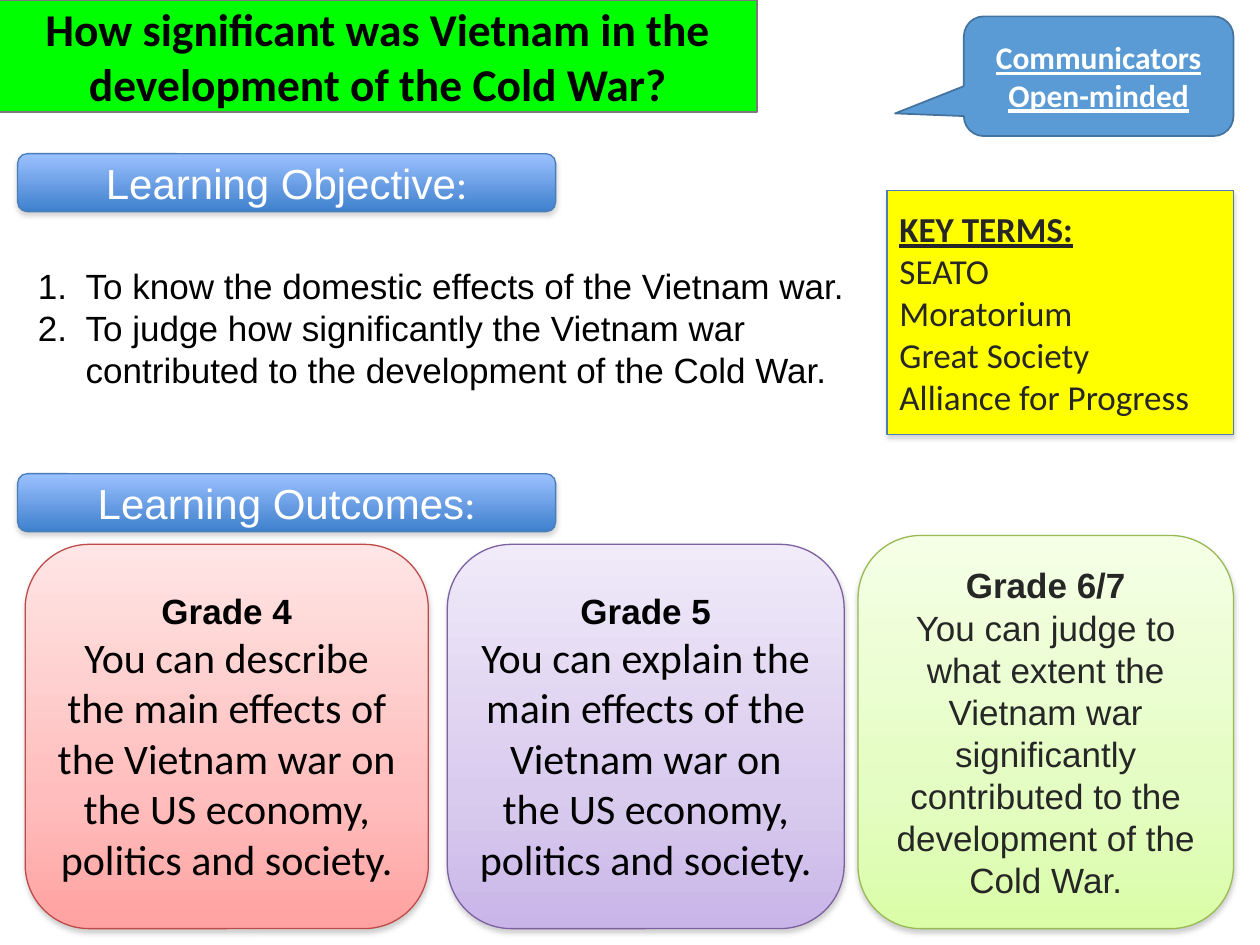
from copy import deepcopy

from lxml import etree
from pptx import Presentation
from pptx import util as u
from pptx.dml.color import RGBColor
from pptx.enum import shapes, text
from pptx.oxml.ns import qn

BLACK = RGBColor(0x00, 0x00, 0x00)
WHITE = RGBColor(0xFF, 0xFF, 0xFF)
CHARCOAL = RGBColor(0x26, 0x26, 0x26)
GREY = RGBColor(0x7A, 0x7A, 0x7A)
SHADOW = RGBColor(0x80, 0x80, 0x80)
GREEN = RGBColor(0x00, 0xFF, 0x00)
YELLOW = RGBColor(0xFF, 0xFF, 0x00)
BLUE = RGBColor(0x5B, 0x9B, 0xD5)
BLUE_EDGE = RGBColor(0x43, 0x73, 0x9E)
PANEL_EDGE = RGBColor(0x4A, 0x7E, 0xBB)
RED_EDGE = RGBColor(0xBE, 0x4B, 0x48)
PURPLE_EDGE = RGBColor(0x7D, 0x60, 0xA0)
LIME_EDGE = RGBColor(0x98, 0xB9, 0x54)

# Gradient stops from top to bottom: (position, colour)
HEADING_FADE = [(0, RGBColor(0x9B, 0xC1, 0xFF)), (1, RGBColor(0x3F, 0x80, 0xCD))]
RED_FADE = [(0, RGBColor(0xFF, 0xE5, 0xE5)), (0.65, RGBColor(0xFF, 0xBE, 0xBD)),
            (1, RGBColor(0xFF, 0xA2, 0xA1))]
PURPLE_FADE = [(0, RGBColor(0xF0, 0xEA, 0xF9)), (0.65, RGBColor(0xD9, 0xCB, 0xEE)),
               (1, RGBColor(0xC9, 0xB5, 0xE8))]
LIME_FADE = [(0, RGBColor(0xF5, 0xFF, 0xE6)), (0.65, RGBColor(0xE4, 0xFD, 0xC2)),
             (1, RGBColor(0xDA, 0xFD, 0xA7))]

SHAPE = shapes.MSO_SHAPE
CENTER, LEFT = text.PP_ALIGN.CENTER, text.PP_ALIGN.LEFT
CARD_BOTTOM = 7.37


def place(shape, left, top, width, height):
    shape.left, shape.top = u.Inches(left), u.Inches(top)
    shape.width, shape.height = u.Inches(width), u.Inches(height)


def style_line(shape, color, width):
    shape.line.color.rgb = color
    shape.line.width = u.Pt(width)


def style_fill(shape, fill):
    """Fill with one colour, or with a list of stops from top to bottom."""
    if isinstance(fill, RGBColor):
        shape.fill.solid()
        shape.fill.fore_color.rgb = fill
        return
    shape.fill.gradient()
    shape.fill.gradient_angle = 270
    stop_list = shape._element.spPr.find(".//" + qn("a:gsLst"))
    while len(stop_list) < len(fill):
        stop_list.append(deepcopy(stop_list[0]))
    for stop, (position, color) in zip(shape.fill.gradient_stops, fill):
        stop.position = position
        stop.color.rgb = color


def add_shadow(shape, opacity, distance):
    effects = shape._element.spPr.find(qn("a:effectLst"))
    shadow = etree.SubElement(effects, qn("a:outerShdw"), blurRad=str(u.Pt(3.1)),
                              dist=str(u.Pt(distance)), dir="5400000", rotWithShape="0")
    color = etree.SubElement(shadow, qn("a:srgbClr"), val=str(SHADOW))
    etree.SubElement(color, qn("a:alpha"), val=str(opacity * 1000))


def add_box(slide, kind, at, fill, edge, width=0.75):
    box = slide.shapes.add_shape(kind, *map(u.Inches, at))
    box.shadow.inherit = False
    style_fill(box, fill)
    style_line(box, edge, width)
    box.text_frame.word_wrap = True
    box.text_frame.vertical_anchor = text.MSO_ANCHOR.MIDDLE
    return box


def style_para(para, size, font, color, align=CENTER, bold=False, underline=False):
    para.alignment = align
    for span in para.runs:
        span.font.size = u.Pt(size)
        span.font.name = font
        span.font.color.rgb = color
        span.font.bold = bold
        span.font.underline = underline


def fill_title(slide):
    title = slide.shapes.title
    place(title, -0.01, 0, 6.02, 0.89)
    # Give the placeholder a rounded outline
    outline = etree.Element(qn("a:prstGeom"), prst="roundRect")
    etree.SubElement(outline, qn("a:avLst"))
    title._element.spPr.insert(1, outline)
    style_fill(title, GREEN)
    style_line(title, GREY, 1)
    frame = title.text_frame
    frame.text = "How significant was Vietnam in the development of the Cold War?"
    frame.auto_size = text.MSO_AUTO_SIZE.NONE
    frame.vertical_anchor = text.MSO_ANCHOR.MIDDLE
    style_para(frame.paragraphs[0], 26, "Calibri", BLACK, bold=True)


def fill_objectives(slide, objectives):
    body = slide.placeholders[1]
    place(body, 0.2, 2.05, 6.78, 1.45)
    frame = body.text_frame
    frame.text = "\n".join(objectives)
    frame.auto_size = text.MSO_AUTO_SIZE.NONE
    for para in frame.paragraphs:
        style_para(para, 20, "Arial", BLACK, LEFT)
        para.space_before = u.Pt(0)
        props = para._p.get_or_add_pPr()
        props.set("marL", str(u.Inches(0.38)))
        props.set("indent", str(u.Inches(-0.38)))
        etree.SubElement(props, qn("a:buFont"), typeface="+mj-lt")
        etree.SubElement(props, qn("a:buAutoNum"), type="arabicPeriod")


def add_heading(slide, top, label):
    box = add_box(slide, SHAPE.ROUNDED_RECTANGLE, (0.14, top, 4.27, 0.46),
                  HEADING_FADE, PANEL_EDGE)
    add_shadow(box, 35, 1.8)
    para = box.text_frame.paragraphs[0]
    para.text = label
    colon = para.add_run()
    colon.text = ":"
    style_para(para, 24, "Arial", WHITE)
    colon.font.name = "Calibri"


def add_card(slide, left, top, width, fade, edge, grade, outcome, size, font, color):
    box = add_box(slide, SHAPE.ROUNDED_RECTANGLE, (left, top, width, CARD_BOTTOM - top),
                  fade, edge)
    add_shadow(box, 38, 1.6)
    box.text_frame.text = f"{grade}\n{outcome}"
    heading, detail = box.text_frame.paragraphs
    style_para(heading, 20, "Arial", color, bold=True)
    style_para(detail, size, font, color)


def add_key_terms(slide, terms):
    box = add_box(slide, SHAPE.RECTANGLE, (7.04, 1.51, 2.75, 1.94), YELLOW, PANEL_EDGE)
    add_shadow(box, 35, 1.8)
    box.text_frame.text = "\n".join(["KEY TERMS:"] + terms)
    for index, para in enumerate(box.text_frame.paragraphs):
        style_para(para, 20, "Calibri", CHARCOAL, LEFT, bold=index == 0, underline=index == 0)


def add_callout(slide, traits):
    box = add_box(slide, SHAPE.ROUNDED_RECTANGULAR_CALLOUT, (7.65, 0.13, 2.14, 0.95),
                  BLUE, BLUE_EDGE, 1)
    box.adjustments[0], box.adjustments[1] = -0.755, 0.311
    box.text_frame.text = "\n".join(traits)
    for para in box.text_frame.paragraphs:
        style_para(para, 18, "Calibri", WHITE, bold=True, underline=True)


def main():
    deck = Presentation()
    deck.slide_width, deck.slide_height = u.Inches(10), u.Inches(7.5)
    page = deck.slides.add_slide(deck.slide_layouts[1])

    # Title and objectives
    fill_title(page)
    add_heading(page, 1.22, "Learning Objective")
    fill_objectives(page, [
        "To know the domestic effects of the Vietnam war.",
        "To judge how significantly the Vietnam war contributed to the "
        "development of the Cold War."])

    # Outcomes by grade
    add_heading(page, 3.76, "Learning Outcomes")
    effects = "the main effects of the Vietnam war on the US economy, politics and society."
    add_card(page, 0.2, 4.32, 3.2, RED_FADE, RED_EDGE, "Grade 4",
             f"You can describe {effects}", 24, "Calibri", BLACK)
    add_card(page, 3.55, 4.32, 3.15, PURPLE_FADE, PURPLE_EDGE, "Grade 5",
             f"You can explain {effects}", 24, "Calibri", BLACK)
    add_card(page, 6.81, 4.25, 2.98, LIME_FADE, LIME_EDGE, "Grade 6/7",
             "You can judge to what extent the Vietnam war significantly contributed "
             "to the development of the Cold War.", 20, "Arial", CHARCOAL)

    # Side notes
    add_key_terms(page, ["SEATO", "Moratorium", "Great Society", "Alliance for Progress"])
    add_callout(page, ["Communicators", "Open-minded"])
    deck.save("out.pptx")


if __name__ == "__main__":
    main()
